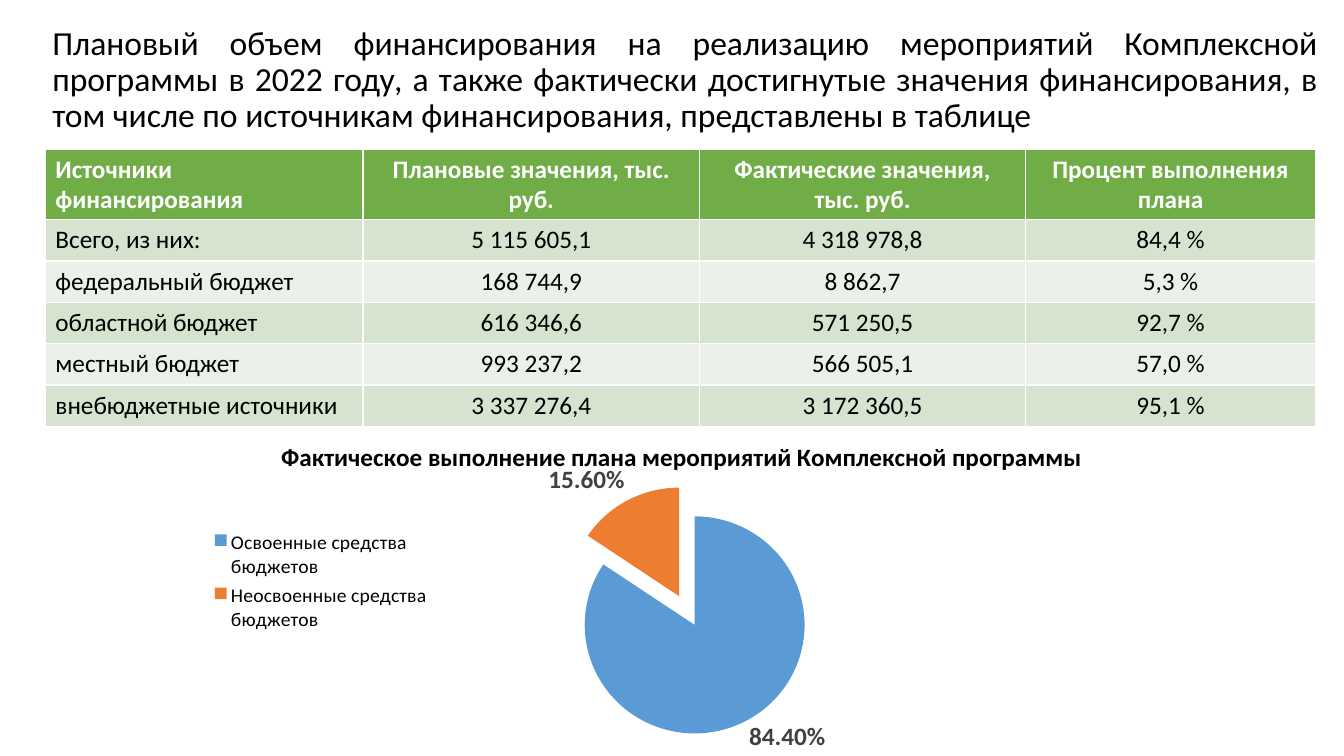
from lxml import etree
from pptx import Presentation
from pptx.chart.data import CategoryChartData
from pptx.dml.color import RGBColor
from pptx.enum.chart import XL_CHART_TYPE, XL_LABEL_POSITION, XL_LEGEND_POSITION
from pptx.enum.text import PP_ALIGN
from pptx.oxml.ns import qn
from pptx.util import Inches, Pt

PIE = XL_CHART_TYPE.PIE
LABEL_OUTSIDE = XL_LABEL_POSITION.OUTSIDE_END
LEGEND_LEFT = XL_LEGEND_POSITION.LEFT
LEFT, CENTER, JUSTIFY = PP_ALIGN.LEFT, PP_ALIGN.CENTER, PP_ALIGN.JUSTIFY

COLORS = {
    "text": "000000",
    "header_text": "FFFFFF",
    "header": "70AD47",
    "dark_band": "D5E3CF",
    "light_band": "EBF1E9",
    "label": "404040",
    "spent": "5B9BD5",
    "unspent": "ED7D31",
}


def style_font(font, size, color, bold=False):
    font.name = "Calibri"
    font.size = Pt(size)
    font.bold = bold
    font.color.rgb = RGBColor.from_string(COLORS[color])


def make_layout(target, x, y, width, height):
    layout = etree.Element(qn("c:layout"))
    manual = etree.SubElement(layout, qn("c:manualLayout"))
    if target:
        etree.SubElement(manual, qn("c:layoutTarget"), val=target)
    settings = {"xMode": "edge", "yMode": "edge", "x": x, "y": y, "w": width, "h": height}
    for name, value in settings.items():
        etree.SubElement(manual, qn(f"c:{name}"), val=str(value))
    return layout


presentation = Presentation()
presentation.slide_width = Inches(13.33)
presentation.slide_height = Inches(7.5)
slide = presentation.slides.add_slide(presentation.slide_layouts[6])

intro = slide.shapes.add_textbox(Inches(0.42), Inches(0.21), Inches(12.75), Inches(6.84))
intro.text_frame.word_wrap = True
paragraph = intro.text_frame.paragraphs[0]
paragraph.alignment = JUSTIFY
paragraph.line_spacing = 0.9
paragraph.space_before = Pt(10)
run = paragraph.add_run()
run.text = (
    "Плановый объем финансирования на реализацию мероприятий Комплексной программы "
    "в 2022 году, а также фактически достигнутые значения финансирования, "
    "в том числе по источникам финансирования, представлены в таблице"
)
style_font(run.font, 24, "text")

funding_rows = [
    ("Источники финансирования", "Плановые значения, тыс. руб.",
     "Фактические значения, тыс. руб.", "Процент выполнения плана"),
    ("Всего, из них:", "5 115 605,1", "4 318 978,8", "84,4 %"),
    ("федеральный бюджет", "168 744,9", "8 862,7", "5,3 %"),
    ("областной бюджет", "616 346,6", "571 250,5", "92,7 %"),
    ("местный бюджет", "993 237,2", "566 505,1", "57,0 %"),
    ("внебюджетные источники", "3 337 276,4", "3 172 360,5", "95,1 %"),
]
column_widths = [3.15, 3.34, 3.23, 2.88]
table = slide.shapes.add_table(
    len(funding_rows), len(column_widths),
    Inches(0.45), Inches(1.48), Inches(12.6), Inches(2.7),
).table
for column, width in zip(table.columns, column_widths):
    column.width = Inches(width)

for row_index, values in enumerate(funding_rows):
    is_header = row_index == 0
    table.rows[row_index].height = Inches(0.65 if is_header else 0.41)
    band = "header" if is_header else "dark_band" if row_index % 2 else "light_band"
    for column_index, value in enumerate(values):
        cell = table.cell(row_index, column_index)
        cell.fill.solid()
        cell.fill.fore_color.rgb = RGBColor.from_string(COLORS[band])
        paragraph = cell.text_frame.paragraphs[0]
        paragraph.alignment = CENTER if column_index else LEFT
        run = paragraph.add_run()
        run.text = value
        style_font(run.font, 18, "header_text" if is_header else "text", is_header)

chart_data = CategoryChartData(number_format="0.00%")
chart_data.categories = ["Освоенные средства бюджетов", "Неосвоенные средства бюджетов"]
chart_data.add_series("Series 1", (0.844, 0.156))
chart = slide.shapes.add_chart(
    PIE, Inches(1.42), Inches(4.2), Inches(10.68), Inches(3.3), chart_data
).chart
style_font(chart.font, 10, "text")

chart.has_title = True
run = chart.chart_title.text_frame.paragraphs[0].add_run()
run.text = "Фактическое выполнение плана мероприятий Комплексной программы"
style_font(run.font, 18, "text", True)
chart.chart_title.include_in_layout = False

chart.has_legend = True
legend = chart.legend
legend.position = LEGEND_LEFT
legend.include_in_layout = False
style_font(legend.font, 14, "text")
legend_position = legend._element.find(qn("c:legendPos"))
legend_position.addnext(make_layout(None, 0.06, 0.31, 0.21, 0.34))

plot = chart.plots[0]
plot.vary_by_categories = True
series = plot.series[0]
for index, color in enumerate(("spent", "unspent")):
    fill = series.points[index].format.fill
    fill.solid()
    fill.fore_color.rgb = RGBColor.from_string(COLORS[color])
explosion = etree.Element(qn("c:explosion"), val="15")
series._element.find(qn("c:dPt")).addprevious(explosion)

labels = series.data_labels
labels.show_value = True
labels.number_format = "0.00%"
labels.number_format_is_linked = False
labels.position = LABEL_OUTSIDE
style_font(labels.font, 18, "label", True)

plot_area = chart._chartSpace.chart.plotArea
for old_layout in plot_area.findall(qn("c:layout")):
    plot_area.remove(old_layout)
plot_area.insert(0, make_layout("inner", 0.01, 0.19, 0.99, 0.76))

presentation.save("out.pptx")
